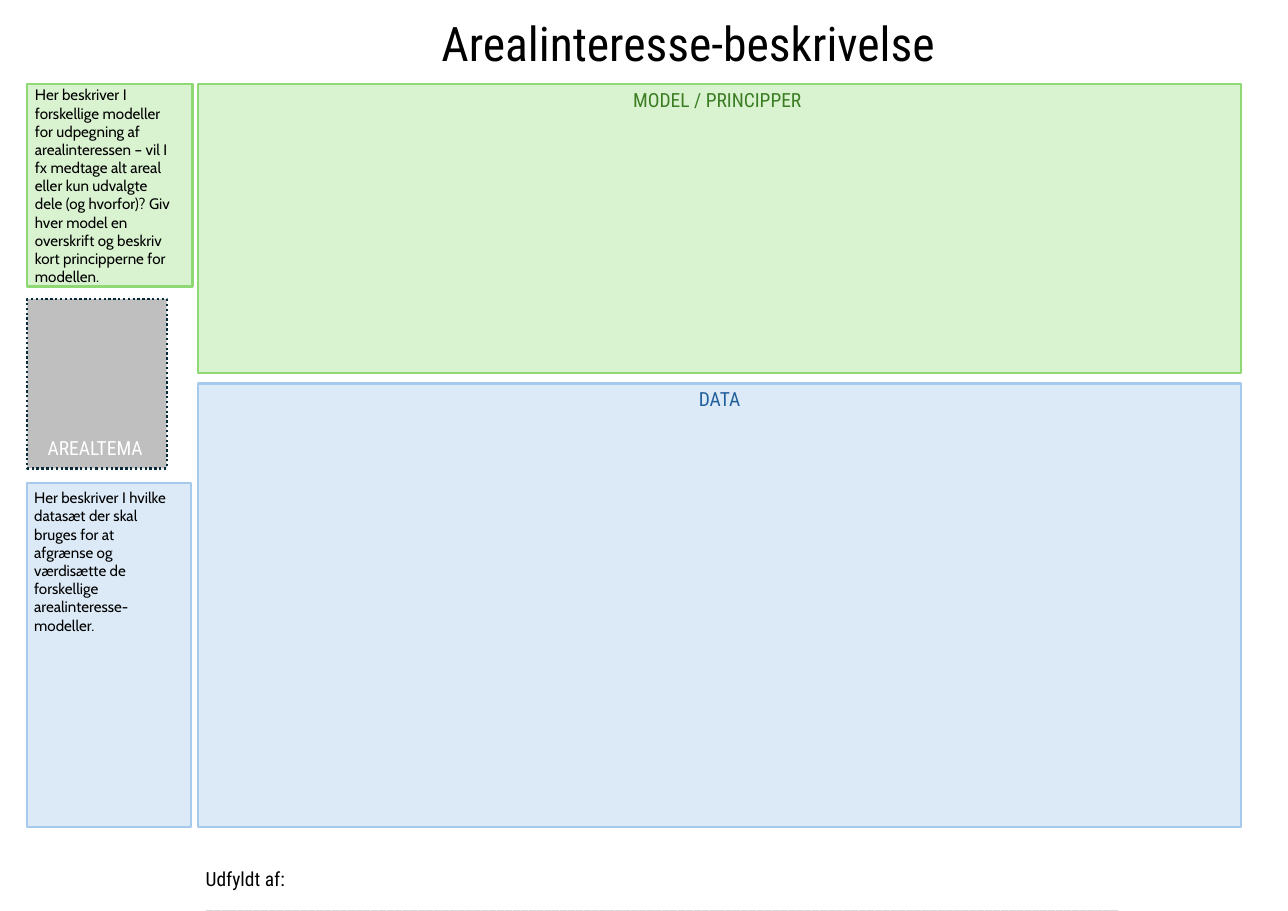
from dataclasses import dataclass

from pptx import Presentation
from pptx.dml.color import RGBColor
from pptx.enum.dml import MSO_LINE
from pptx.enum.shapes import MSO_SHAPE
from pptx.enum.text import MSO_ANCHOR, MSO_AUTO_SIZE, PP_ALIGN
from pptx.util import Inches, Pt


@dataclass(frozen=True)
class Theme:
    """Fonts, type sizes and colours of the slide."""
    head_font: str = "Roboto Condensed"
    body_font: str = "Cabin"
    title_size: int = 44
    head_size: int = 18
    body_size: int = 14
    border: float = 2.25
    black: str = "000000"
    white: str = "FFFFFF"
    rule: str = "D9D9D9"
    grey: str = "BFBFBF"
    navy: str = "092A39"
    green_fill: str = "D9F2D0"
    green_line: str = "8ED973"
    green_text: str = "3B7D23"
    blue_fill: str = "DCEAF7"
    blue_line: str = "A6CAEC"
    blue_text: str = "215F9A"


THEME = Theme()
LEFT, MAIN_LEFT, MAIN_WIDTH = 0.35, 2.54, 13.39
MODEL_TOP, DATA_TOP, LABEL_HEIGHT = 1.08, 4.92, 0.4

MODEL_HELP = (
    "Her beskriver I forskellige modeller for udpegning af arealinteressen – "
    "vil I fx medtage alt areal eller kun udvalgte dele (og hvorfor)? Giv hver "
    "model en overskrift og beskriv kort principperne for modellen."
)
DATA_HELP = (
    "Her beskriver I hvilke datasæt der skal bruges for at afgrænse og "
    "værdisætte de forskellige arealinteresse-modeller."
)


def add_run(p, text, font=THEME.head_font, size=THEME.head_size, color=THEME.black):
    """Append formatted text to a paragraph."""
    r = p.add_run()
    r.text = text
    r.font.name = font
    r.font.size = Pt(size)
    r.font.color.rgb = RGBColor.from_string(color)


def add_box(shapes, left, top, width, height, fill, line, dash=None):
    """Draw a bordered rectangle."""
    sp = shapes.add_shape(MSO_SHAPE.RECTANGLE, Inches(left), Inches(top),
                          Inches(width), Inches(height))
    sp.shadow.inherit = False
    sp.fill.solid()
    sp.fill.fore_color.rgb = RGBColor.from_string(fill)
    sp.line.color.rgb = RGBColor.from_string(line)
    sp.line.width = Pt(THEME.border)
    if dash:
        sp.line.dash_style = dash


def add_text(shapes, left, top, width, height, text, align=PP_ALIGN.LEFT, **style):
    """Add a wrapped text box and return its paragraph."""
    sp = shapes.add_textbox(Inches(left), Inches(top), Inches(width), Inches(height))
    tf = sp.text_frame
    tf.word_wrap = True
    tf.auto_size = MSO_AUTO_SIZE.SHAPE_TO_FIT_TEXT
    p = tf.paragraphs[0]
    p.alignment = align
    add_run(p, text, **style)
    return p


def set_title(s, text):
    """Place and format the title placeholder."""
    sp = s.shapes.title
    sp.left, sp.top = Inches(2.99), Inches(0.12)
    sp.width, sp.height = Inches(11.69), Inches(0.84)
    tf = sp.text_frame
    tf.vertical_anchor = MSO_ANCHOR.MIDDLE
    p = tf.paragraphs[0]
    p.alignment = PP_ALIGN.CENTER
    add_run(p, text, size=THEME.title_size)


def add_panel(shapes, top, height, label, fill, line, color):
    """Draw a wide writing area with a centred label."""
    add_box(shapes, MAIN_LEFT, top, MAIN_WIDTH, height, fill, line)
    add_text(shapes, MAIN_LEFT, top, MAIN_WIDTH, LABEL_HEIGHT, label,
             align=PP_ALIGN.CENTER, color=color)


def add_theme_card(shapes):
    """Group the dotted card with its caption."""
    card = shapes.add_group_shape().shapes
    add_box(card, LEFT, 3.84, 1.79, 2.17, THEME.grey, THEME.navy, MSO_LINE.ROUND_DOT)
    add_text(card, 0.29, 5.54, 1.92, LABEL_HEIGHT, "AREALTEMA ",
             align=PP_ALIGN.CENTER, color=THEME.white)


def main():
    """Build and save the slide."""
    prs = Presentation()
    prs.slide_width, prs.slide_height = Inches(16.53), Inches(11.69)
    s = prs.slides.add_slide(prs.slide_layouts[5])
    shapes = s.shapes
    body = {"font": THEME.body_font, "size": THEME.body_size}

    set_title(s, "Arealinteresse-beskrivelse")
    add_theme_card(shapes)
    add_panel(shapes, DATA_TOP, 5.69, "DATA",
              THEME.blue_fill, THEME.blue_line, THEME.blue_text)
    add_panel(shapes, MODEL_TOP, 3.71, "MODEL / PRINCIPPER ",
              THEME.green_fill, THEME.green_line, THEME.green_text)
    add_box(shapes, LEFT, MODEL_TOP, 2.12, 2.6, THEME.green_fill, THEME.green_line)
    add_text(shapes, LEFT, 1.05, 2.03, 2.69, MODEL_HELP, **body)
    add_box(shapes, LEFT, 6.2, 2.1, 4.41, THEME.blue_fill, THEME.blue_line)
    add_text(shapes, 0.34, 6.22, 2, 1.99, DATA_HELP, **body)
    p = add_text(shapes, MAIN_LEFT, 11.08, 12.01, LABEL_HEIGHT, "Udfyldt af: ")
    add_run(p, "_" * 132, color=THEME.rule)

    prs.save("out.pptx")


if __name__ == "__main__":
    main()
